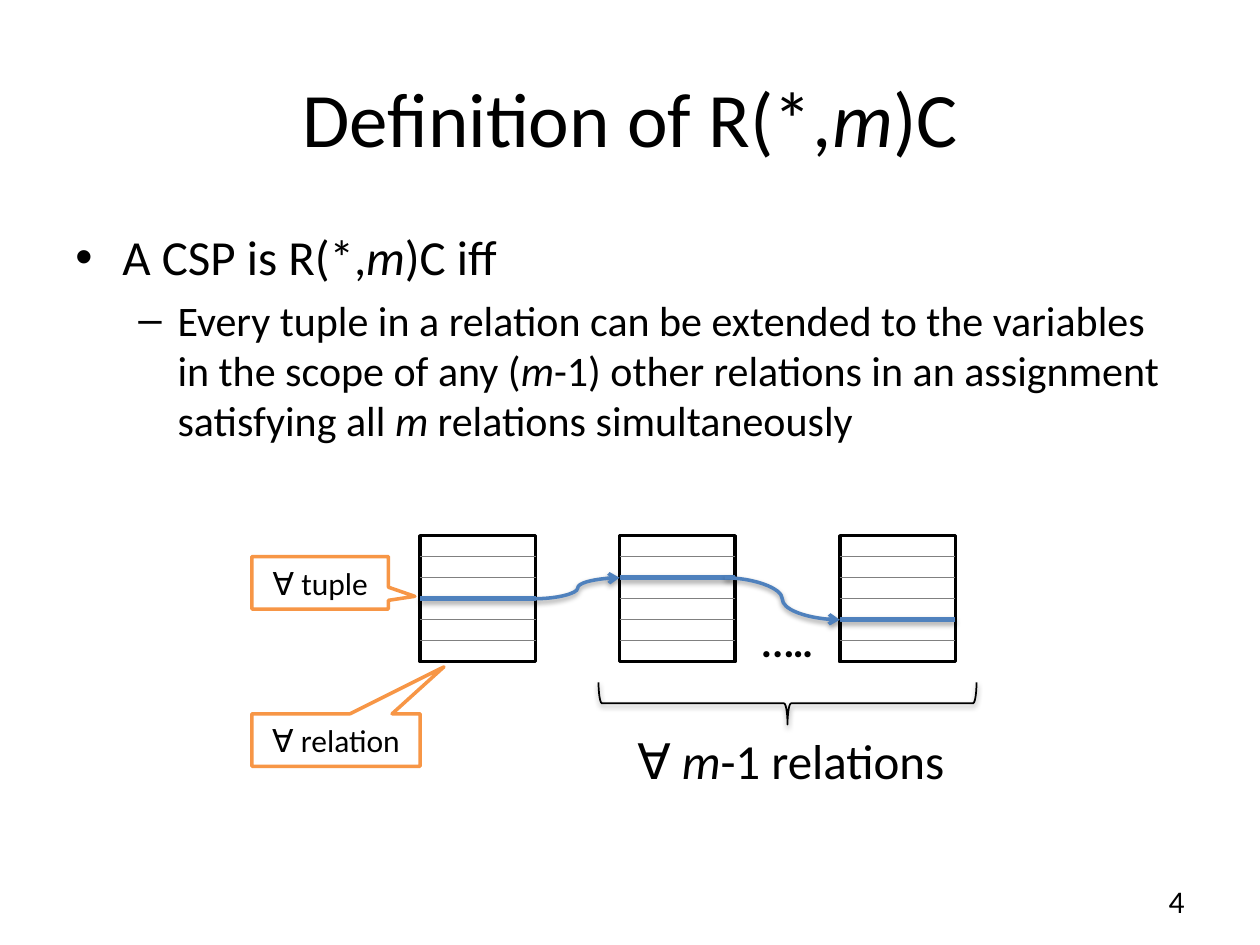
from dataclasses import dataclass

from lxml.etree import SubElement
from pptx import Presentation
from pptx.dml.color import RGBColor
from pptx.enum.shapes import MSO_CONNECTOR, MSO_SHAPE
from pptx.enum.text import MSO_ANCHOR, PP_ALIGN
from pptx.oxml.ns import qn
from pptx.util import Cm, Pt


@dataclass(frozen=True)
class Theme:
    """Colours, font and type sizes of the slide."""
    font: str = "Calibri"
    ink: RGBColor = RGBColor(0, 0, 0)
    paper: RGBColor = RGBColor(255, 255, 255)
    grid: RGBColor = RGBColor(0x80, 0x80, 0x80)
    tuple: RGBColor = RGBColor(0x4F, 0x81, 0xBD)
    callout: RGBColor = RGBColor(0xF7, 0x96, 0x46)
    title: int = 44
    body: int = 28
    sub: int = 24
    label: int = 18


THEME = Theme()
ROWS = 6
TABLE_W, TABLE_H, TABLE_TOP = 2.33, 2.54, 10.8
ROW_H = TABLE_H / ROWS
TABLES = [(8.47, 3), (12.49, 2), (16.93, 4)]


def set_all(obj, values):
    """Set each attribute of obj from a dict of values."""
    for name, value in values.items():
        setattr(obj, name, value)


def write(p, text, size, align=PP_ALIGN.LEFT, bold=False):
    """Fill a paragraph, with every second part between underscores in italics."""
    p.alignment = align
    for i, part in enumerate(text.split("_")):
        r = p.add_run()
        r.text = part
        set_all(r.font, {"name": THEME.font, "size": Pt(size),
                         "bold": bold, "italic": i % 2 == 1})
        r.font.color.rgb = THEME.ink


def add_text(s, box, text, size, align=PP_ALIGN.LEFT, anchor=MSO_ANCHOR.TOP,
             wrap=True, bold=False):
    """Add a text box with one paragraph and return its text frame."""
    tf = s.shapes.add_textbox(*map(Cm, box)).text_frame
    set_all(tf, {"word_wrap": wrap, "vertical_anchor": anchor})
    write(tf.paragraphs[0], text, size, align, bold)
    return tf


def set_bullet(p, char, left, hang, before):
    """Give a paragraph a hanging bullet and space before it."""
    p.space_before = Pt(before)
    pPr = p._p.get_or_add_pPr()
    pPr.set("marL", str(Cm(left)))
    pPr.set("indent", str(-Cm(hang)))
    SubElement(pPr, qn("a:buFont"), typeface="Arial")
    SubElement(pPr, qn("a:buChar"), char=char)


def set_effect(sp, alpha=0):
    """Replace the theme shadow with a soft one, or with none."""
    effects = SubElement(sp._element.spPr, qn("a:effectLst"))
    if alpha:
        shadow = SubElement(effects, qn("a:outerShdw"), blurRad=str(Pt(3.1)),
                            dist=str(Pt(1.7)), dir="5400000", rotWithShape="0")
        color = SubElement(shadow, qn("a:srgbClr"), val=str(THEME.ink))
        SubElement(color, qn("a:alpha"), val=str(alpha * 1000))


def add_line(s, kind, start, end, color, width, alpha=0, arrow=False):
    """Add a connector between two points."""
    sp = s.shapes.add_connector(kind, *map(Cm, (*start, *end)))
    sp.line.color.rgb = color
    sp.line.width = Pt(width)
    if arrow:
        SubElement(sp.line._get_or_add_ln(), qn("a:tailEnd"), type="arrow")
    set_effect(sp, alpha)
    return sp


def add_outlined(s, kind, box, color, width, adjust=(), fill=True):
    """Add a preset shape with an outline and a paper fill or none."""
    sp = s.shapes.add_shape(kind, *map(Cm, box))
    sp.shadow.inherit = False
    if fill:
        sp.fill.solid()
        sp.fill.fore_color.rgb = THEME.paper
    else:
        sp.fill.background()
    sp.line.color.rgb = color
    sp.line.width = Pt(width)
    for i, value in enumerate(adjust):
        sp.adjustments[i] = value
    return sp


def row_y(row):
    """Return the height of a row line."""
    return TABLE_TOP + row * ROW_H


def add_relation(s, left, chosen):
    """Draw a relation as ruled rows with one highlighted tuple."""
    rect = add_outlined(s, MSO_SHAPE.RECTANGLE,
                        (left, TABLE_TOP, TABLE_W, TABLE_H), THEME.ink, 2)
    for row in range(1, ROWS):
        look = (THEME.tuple, 3, 35) if row == chosen else (THEME.grid, 0.75)
        y = row_y(row)
        line = add_line(s, MSO_CONNECTOR.STRAIGHT, (left, y),
                        (left + TABLE_W, y), *look)
        if row * 2 == ROWS:
            line.begin_connect(rect, 1)
            line.end_connect(rect, 3)


def add_link(s, start, end):
    """Draw a curved arrow from one tuple to the next."""
    add_line(s, MSO_CONNECTOR.CURVE, start, end, THEME.tuple, 2, 38, True)


def add_callout(s, box, text, adjust):
    """Add a labelled callout."""
    sp = add_outlined(s, MSO_SHAPE.RECTANGULAR_CALLOUT, box, THEME.callout, 2, adjust)
    tf = sp.text_frame
    set_all(tf, {"margin_left": 0, "margin_right": 0, "margin_top": 0,
                 "margin_bottom": 0, "vertical_anchor": MSO_ANCHOR.MIDDLE})
    write(tf.paragraphs[0], text, THEME.label, PP_ALIGN.CENTER)


def add_brace(s, box):
    """Add a brace turned to open upwards."""
    sp = add_outlined(s, MSO_SHAPE.RIGHT_BRACE, box, THEME.ink, 1, (0.083, 0.5), False)
    sp.rotation = 90
    sp._element.spPr.remove(sp._element.spPr.find(qn("a:effectLst")))
    set_effect(sp, 38)


def add_body(s):
    """Add the definition with its two bullet levels."""
    tf = add_text(s, (1.27, 4.45, 22.86, 12.57), "A CSP is R(*,_m_)C iff", THEME.body)
    set_bullet(tf.paragraphs[0], "•", 0.95, 0.95, 5.6)
    p = tf.add_paragraph()
    p.level = 1
    write(p, "Every tuple in a relation can be extended to the variables in the "
             "scope of any (_m_-1) other relations in an assignment satisfying "
             "all _m_ relations simultaneously", THEME.sub)
    set_bullet(p, "–", 2.06, 0.79, 4.8)


def main():
    """Build the slide and save it."""
    prs = Presentation()
    set_all(prs, {"slide_width": Cm(25.4), "slide_height": Cm(19.05)})
    s = prs.slides.add_slide(prs.slide_layouts[6])
    add_text(s, (1.27, 0.76, 22.86, 3.18), "Definition of R(*,_m_)C", THEME.title,
             PP_ALIGN.CENTER, MSO_ANCHOR.MIDDLE)
    add_body(s)
    for left, chosen in TABLES:
        add_relation(s, left, chosen)
    (first, a), (second, b), (third, c) = TABLES
    add_link(s, (first + TABLE_W, row_y(a)), (second, row_y(b)))
    add_link(s, (second + TABLE_W - 0.21, row_y(b)), (third, row_y(c)))
    add_brace(s, (15.45, 10.37, 0.85, 7.62))
    add_text(s, (15.09, 12.28, 1.57, 1.27), "..…", THEME.sub, wrap=False, bold=True)
    add_text(s, (12.6, 14.61, 7.49, 1.45), "∀ _m_-1 relations", THEME.body, wrap=False)
    add_callout(s, (5.08, 11.22, 2.75, 1.06), "∀ tuple", (0.694, 0.257))
    add_callout(s, (5.08, 14.39, 3.39, 1.06), "∀ relation", (0.642, -1.393))
    add_text(s, (18.2, 17.65, 5.93, 1.02), "4", THEME.label, PP_ALIGN.RIGHT,
             MSO_ANCHOR.MIDDLE)
    prs.save("out.pptx")


if __name__ == "__main__":
    main()
